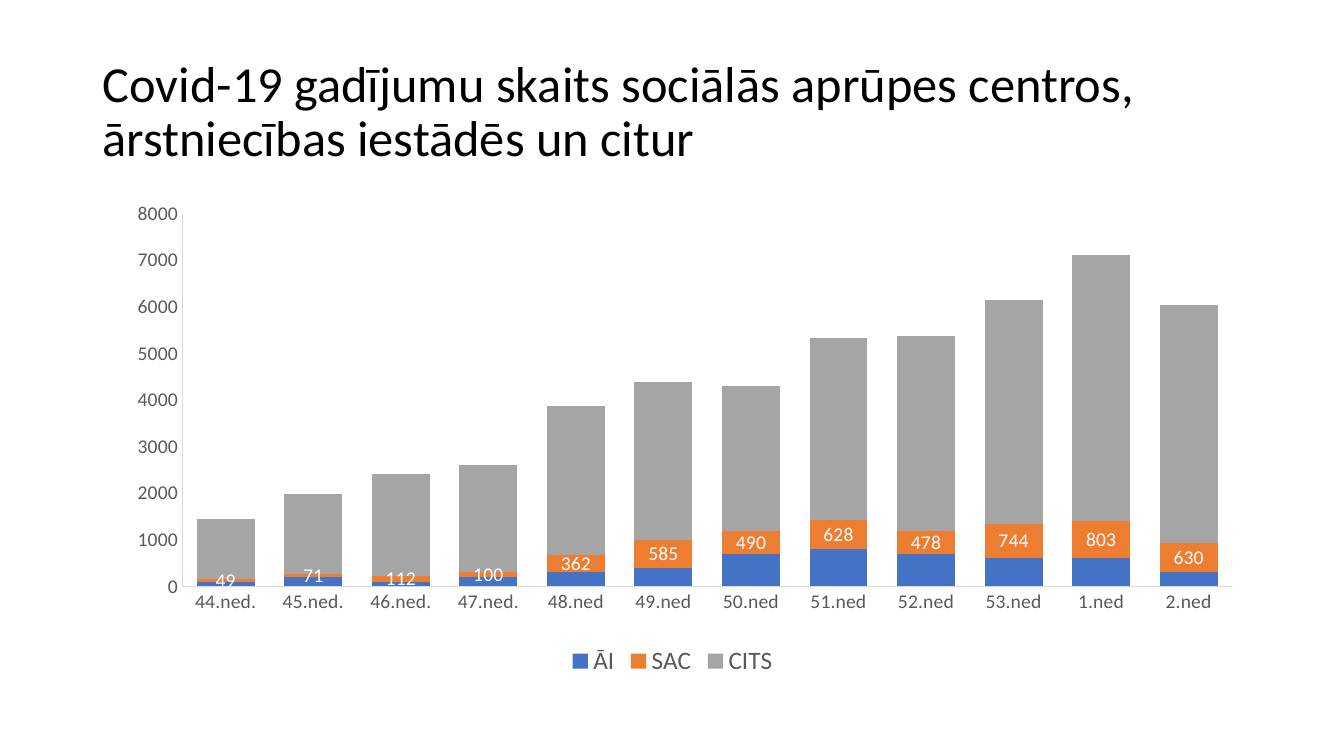
from lxml import etree
from pptx import Presentation
from pptx.chart.data import CategoryChartData
from pptx.dml.color import RGBColor
from pptx.enum.chart import XL_CHART_TYPE as CT, XL_LABEL_POSITION as LP
from pptx.enum.chart import XL_LEGEND_POSITION as LEG, XL_TICK_MARK as TM
from pptx.enum.text import MSO_ANCHOR
from pptx.oxml.ns import qn
from pptx.util import Inches, Pt

FONT = "Calibri"
BLACK = RGBColor(0x00, 0x00, 0x00)
WHITE = RGBColor(0xFF, 0xFF, 0xFF)
GREY = RGBColor(0x59, 0x59, 0x59)
AXIS = RGBColor(0xD9, 0xD9, 0xD9)
BLUE = RGBColor(0x44, 0x72, 0xC4)
ORANGE = RGBColor(0xED, 0x7D, 0x31)
SILVER = RGBColor(0xA5, 0xA5, 0xA5)

TITLE = ("Covid-19 gadījumu skaits sociālās aprūpes centros, "
         "ārstniecības iestādēs un citur")
WEEKS = ["44.ned.", "45.ned.", "46.ned.", "47.ned.", "48.ned", "49.ned",
         "50.ned", "51.ned", "52.ned", "53.ned", "1.ned", "2.ned"]
SERIES = [
    ("ĀI", BLUE, [100, 200, 100, 200, 300, 400, 700, 800, 700, 600, 600, 300]),
    ("SAC", ORANGE, [49, 71, 112, 100, 362, 585, 490, 628, 478, 744, 803, 630]),
    ("CITS", SILVER, [1300, 1700, 2200, 2300, 3200, 3400,
                      3100, 3900, 4200, 4800, 5700, 5100]),
]


def set_font(font, size, color):
    """Apply the slide font with a size and colour."""
    font.name = FONT
    font.size = Pt(size)
    font.color.rgb = color


def add_title(s, left, top, width, height):
    """Place the slide title, centred vertically in its box."""
    tf = s.shapes.add_textbox(*map(Inches, (left, top, width, height))).text_frame
    tf.word_wrap = True
    tf.vertical_anchor = MSO_ANCHOR.MIDDLE
    p = tf.paragraphs[0]
    p.text = TITLE
    p.line_spacing = 0.9
    set_font(p.runs[0].font, 36, BLACK)


def set_plot_layout(chart, x, y, w, h):
    """Fix the inner plot area as fractions of the chart."""
    area = chart.plots[0]._element.getparent()
    layout = area.find(qn("c:layout"))
    if layout is None:
        layout = etree.Element(qn("c:layout"))
        area.insert(0, layout)
    manual = etree.SubElement(layout, qn("c:manualLayout"))
    for tag, val in (("layoutTarget", "inner"), ("xMode", "edge"),
                     ("yMode", "edge"), ("x", x), ("y", y), ("w", w), ("h", h)):
        etree.SubElement(manual, qn(f"c:{tag}")).set("val", str(val))


def add_case_chart(s, left, top, width, height):
    """Place the stacked column chart of weekly cases."""
    data = CategoryChartData()
    data.categories = WEEKS
    for name, _, vals in SERIES:
        data.add_series(name, vals)
    box = map(Inches, (left, top, width, height))
    chart = s.shapes.add_chart(CT.COLUMN_STACKED, *box, data).chart
    set_font(chart.font, 10, BLACK)
    chart.has_title = False
    chart.has_legend = True
    chart.legend.position = LEG.BOTTOM
    chart.legend.include_in_layout = False
    set_font(chart.legend.font, 18, GREY)

    for axis in (chart.category_axis, chart.value_axis):
        axis.major_tick_mark = axis.minor_tick_mark = TM.NONE
        axis.has_major_gridlines = False
        set_font(axis.tick_labels.font, 14, GREY)
        axis.format.line.color.rgb = AXIS
        axis.format.line.width = Pt(0.75)
    chart.value_axis.minimum_scale = 0
    chart.value_axis.maximum_scale = 8000
    chart.value_axis.major_unit = 1000

    plot = chart.plots[0]
    plot.gap_width = 51
    plot.overlap = 100
    plot.vary_by_categories = False
    for ser, (_, color, _) in zip(plot.series, SERIES):
        ser.format.fill.solid()
        ser.format.fill.fore_color.rgb = color
    labels = plot.series[1].data_labels
    labels.show_value = True
    labels.position = LP.CENTER
    set_font(labels.font, 14, WHITE)
    set_plot_layout(chart, 0.077, 0.021, 0.906, 0.78)


def main():
    """Build the slide and save it."""
    prs = Presentation()
    prs.slide_width, prs.slide_height = Inches(13.33), Inches(7.5)
    s = prs.slides.add_slide(prs.slide_layouts[6])
    add_title(s, 0.92, 0.4, 11.5, 1.45)
    add_case_chart(s, 0.92, 2, 11.5, 4.76)
    prs.save("out.pptx")


if __name__ == "__main__":
    main()
